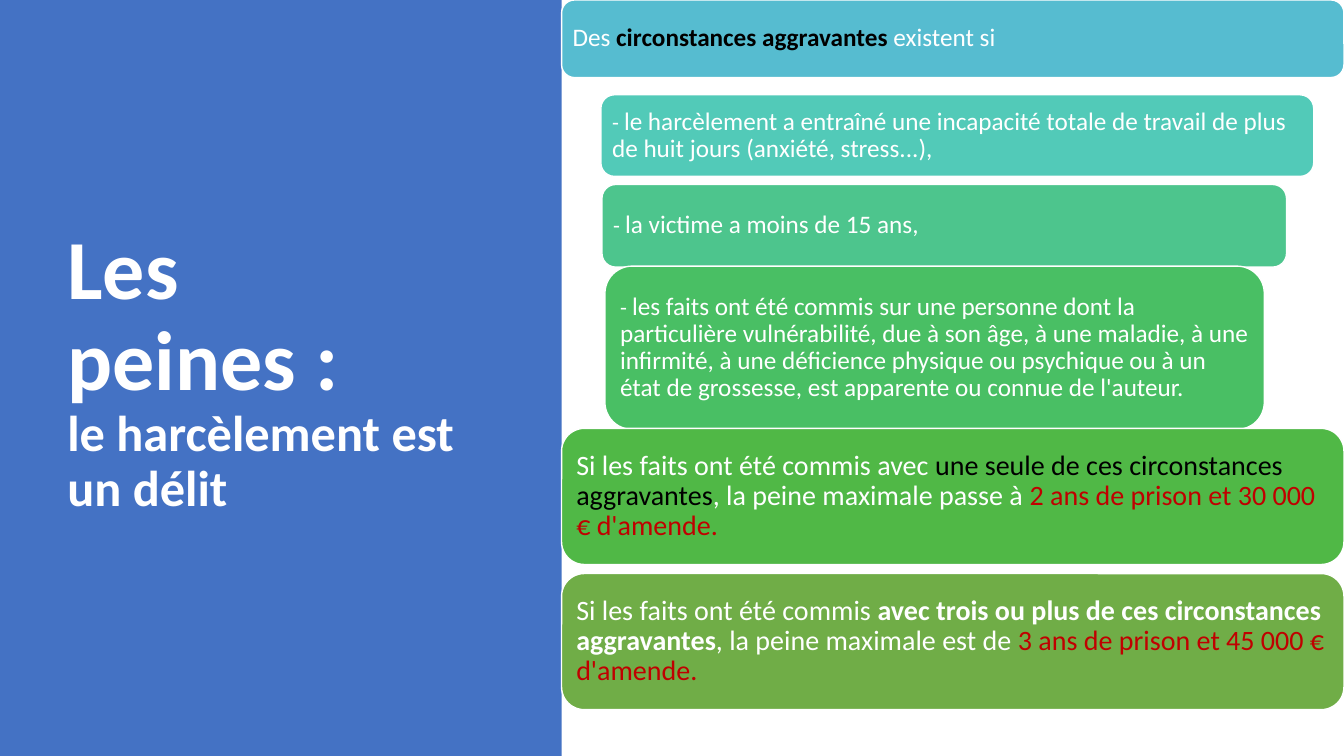
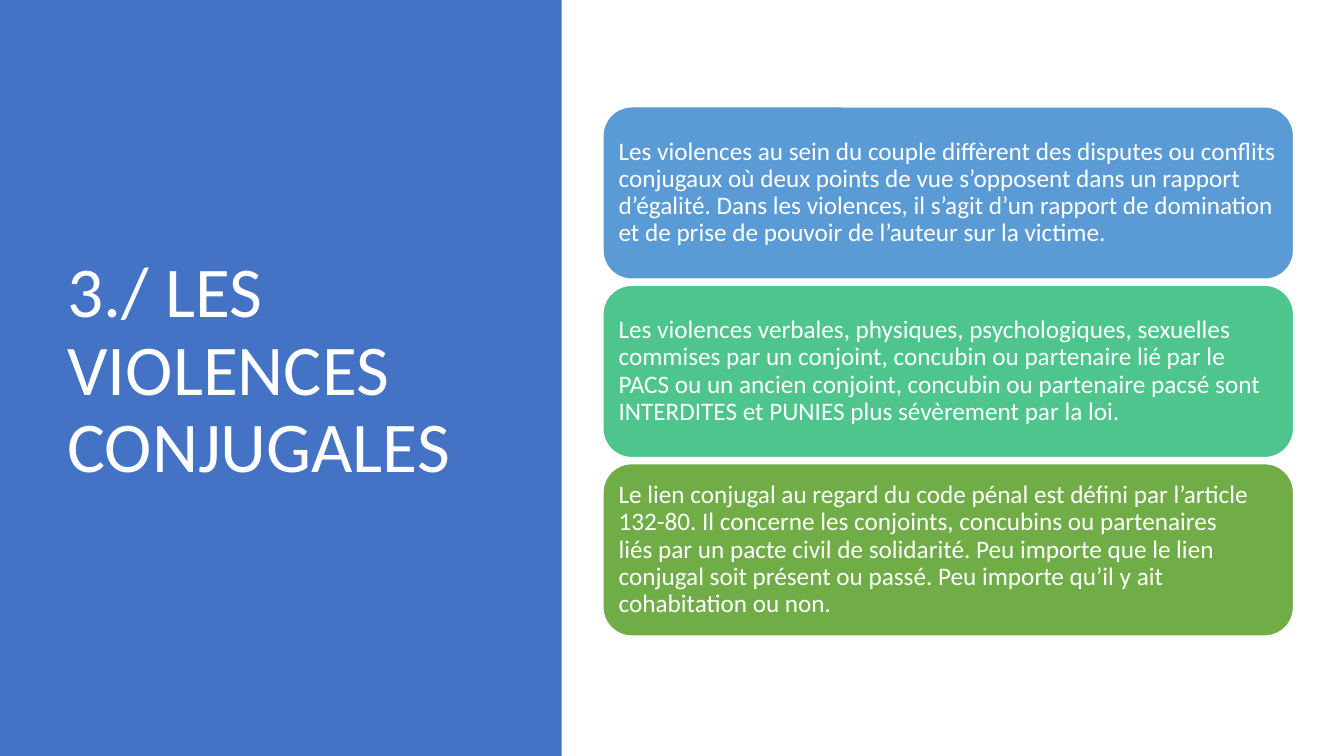
from pptx import Presentation
from pptx.dml.color import RGBColor
from pptx.enum.shapes import MSO_SHAPE
from pptx.enum.text import MSO_ANCHOR, PP_ALIGN
from pptx.util import Inches, Pt

RECT = MSO_SHAPE.RECTANGLE
ROUNDED = MSO_SHAPE.ROUNDED_RECTANGLE
MIDDLE = MSO_ANCHOR.MIDDLE
LEFT = PP_ALIGN.LEFT

FONT = "Calibri"
WHITE, BLACK, RED = "FFFFFF", "000000", "C00000"
PANEL_BLUE = "4472C4"
BLUE, CYAN, TEAL = "5B9BD5", "56BCD0", "52CAB8"
MINT, EMERALD, GREEN, OLIVE = "4DC58D", "49BF64", "50B846", "70AD47"

SLIDE_W, SLIDE_H = 13.33, 7.5
PANEL_W = 5.57
WIDE = SLIDE_W - PANEL_W


def rgb(value):
    return RGBColor.from_string(value)


def run(text, size=18, color=WHITE, bold=False):
    return text, size, color, bold


def add_text(tf, runs):
    """Fill a frame with one left-aligned paragraph; a newline is a line break."""
    tf.word_wrap = True
    tf.vertical_anchor = MIDDLE
    p = tf.paragraphs[0]
    p.alignment = LEFT
    p.line_spacing = 0.9
    for text, size, color, bold in runs:
        for i, line in enumerate(text.split("\n")):
            if i:
                p.add_line_break()
            if not line:
                continue
            r = p.add_run()
            r.text = line
            r.font.name = FONT
            r.font.size = Pt(size)
            r.font.bold = bold
            r.font.color.rgb = rgb(color)


def add_block(s, kind, left, top, width, height, fill):
    sp = s.shapes.add_shape(kind, Inches(left), Inches(top),
                            Inches(width), Inches(height))
    sp.shadow.inherit = False
    sp.fill.solid()
    sp.fill.fore_color.rgb = rgb(fill)
    sp.line.fill.background()
    return sp


def add_card(s, left, top, width, height, fill, runs):
    sp = add_block(s, ROUNDED, left, top, width, height, fill)
    sp.line.color.rgb = rgb(WHITE)
    sp.line.width = Pt(1)
    tf = sp.text_frame
    margin = Inches(0.004 * max(size for _, size, _, _ in runs))
    tf.margin_left = tf.margin_right = margin
    tf.margin_top = tf.margin_bottom = margin
    add_text(tf, runs)


def add_titled_slide(prs, title_runs):
    s = prs.slides.add_slide(prs.slide_layouts[6])
    add_block(s, RECT, 0, 0, PANEL_W, SLIDE_H, PANEL_BLUE)
    title = s.shapes.add_textbox(Inches(0.57), Inches(0.68),
                                 Inches(4.16), Inches(6.02))
    add_text(title.text_frame, title_runs)
    return s


def build_penalties(prs):
    s = add_titled_slide(prs, [
        run("Les peines :\n", 60, bold=True),
        run("le harcèlement est un délit", 36, bold=True),
    ])
    dash = run("- ", 16)
    cards = [
        (PANEL_W, 0, WIDE, 0.77, CYAN, [
            run("Des "),
            run("circonstances aggravantes ", color=BLACK, bold=True),
            run("existent si")]),
        (5.96, 0.94, 7.07, 0.81, TEAL, [
            dash, run("le harcèlement a entraîné une incapacité totale de "
                      "travail de plus de huit jours (anxiété, stress...),")]),
        (5.97, 1.83, 6.79, 0.82, MINT, [
            dash, run("la victime a moins de 15 ans,")]),
        (6, 2.64, 6.54, 1.62, EMERALD, [
            dash, run("les faits ont été commis sur une personne dont la "
                      "particulière vulnérabilité, due à son âge, à une "
                      "maladie, à une infirmité, à une déficience physique ou "
                      "psychique ou à un état de grossesse, est apparente ou "
                      "connue de l'auteur.")]),
        (PANEL_W, 4.25, WIDE, 1.35, GREEN, [
            run("Si les faits ont été commis avec ", 20),
            run("une seule de ces circonstances aggravantes", 20, BLACK),
            run(", la peine maximale passe à ", 20),
            run("2 ans de prison et 30 000 € d'amende.", 20, RED)]),
        (PANEL_W, 5.69, WIDE, 1.35, OLIVE, [
            run("Si les faits ont été commis ", 20),
            run("avec trois ou plus de ces circonstances aggravantes", 20,
                bold=True),
            run(", la peine maximale est de ", 20),
            run("3 ans de prison et 45 000 € d'amende.", 20, RED)]),
    ]
    for card in cards:
        add_card(s, *card)


def build_domestic_violence(prs):
    s = add_titled_slide(prs, [run("3./ LES VIOLENCES CONJUGALES", 51)])
    cards = [
        (BLUE, "Les violences au sein du couple diffèrent des disputes ou "
               "conflits conjugaux où deux points de vue s’opposent dans un "
               "rapport d’égalité. Dans les violences, il s’agit d’un rapport "
               "de domination et de prise de pouvoir de l’auteur sur la "
               "victime."),
        (MINT, "Les violences verbales, physiques, psychologiques, sexuelles "
               "commises par un conjoint, concubin ou partenaire lié par le "
               "PACS ou un ancien conjoint, concubin ou partenaire pacsé sont "
               "INTERDITES et PUNIES plus sévèrement par la loi."),
        (OLIVE, "Le lien conjugal au regard du code pénal est défini par "
                "l’article 132-80. Il concerne les conjoints, concubins ou "
                "partenaires\nliés par un pacte civil de solidarité. Peu "
                "importe que le lien conjugal soit présent ou passé. Peu "
                "importe qu’il y ait\ncohabitation ou non."),
    ]
    height, gap = 1.71, 0.06
    for i, (fill, text) in enumerate(cards):
        add_card(s, 5.98, 1.06 + i * (height + gap), 6.85, height, fill,
                 [run(text)])


def main():
    prs = Presentation()
    prs.slide_width = Inches(SLIDE_W)
    prs.slide_height = Inches(SLIDE_H)
    build_penalties(prs)
    build_domestic_violence(prs)
    prs.save("out.pptx")


if __name__ == "__main__":
    main()
